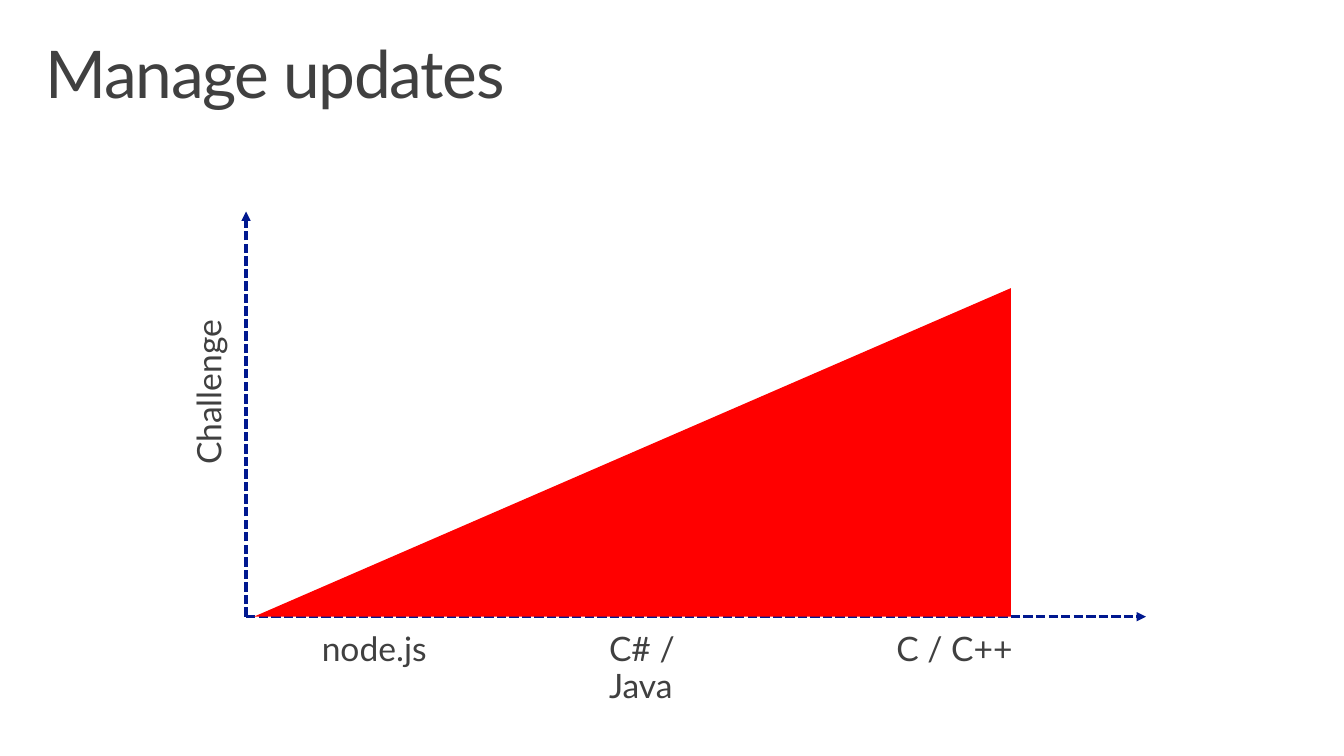
from lxml import etree
from pptx import Presentation
from pptx.dml.color import RGBColor
from pptx.enum.dml import MSO_LINE
from pptx.enum.shapes import MSO_CONNECTOR, MSO_SHAPE
from pptx.enum.text import MSO_ANCHOR, MSO_AUTO_SIZE, PP_ALIGN
from pptx.oxml.ns import qn
from pptx.util import Cm, Pt

STRAIGHT = MSO_CONNECTOR.STRAIGHT
RIGHT_TRIANGLE = MSO_SHAPE.RIGHT_TRIANGLE
DASH = MSO_LINE.SQUARE_DOT
TOP = MSO_ANCHOR.TOP
LEFT = PP_ALIGN.LEFT
NO_FIT = MSO_AUTO_SIZE.NONE

COLORS = {"text": "404040", "axis": "00188F", "challenge": "FF0000"}
FONT = "Lato"
LANGUAGES = ["node.js", "C# / Java", "C / C++"]


def color(name):
    """Return the named colour of the palette."""
    return RGBColor.from_string(COLORS[name])


def set_text(sp, text, size, inset_x, inset_y):
    """Fill a text shape with one left-aligned paragraph."""
    tf = sp.text_frame
    tf.word_wrap = True
    tf.auto_size = NO_FIT
    tf.vertical_anchor = TOP
    tf.margin_left = tf.margin_right = Cm(inset_x)
    tf.margin_top = tf.margin_bottom = Cm(inset_y)
    p = tf.paragraphs[0]
    r = p.add_run()
    r.text = text
    p.alignment = LEFT
    p.line_spacing = 0.9
    p.font.name = FONT
    p.font.size = Pt(size)
    p.font.color.rgb = color("text")
    return r


def add_title(s, text, x, y, w, h):
    """Place the slide title in the given box."""
    sp = s.shapes.title
    sp.left, sp.top, sp.width, sp.height = Cm(x), Cm(y), Cm(w), Cm(h)
    r = set_text(sp, text, 47, 0.41, 0.25)
    r.font._element.set("spc", "-100")


def add_axis(s, x1, y1, x2, y2):
    """Draw a dashed axis with an arrowhead at its end."""
    axis = s.shapes.add_connector(STRAIGHT, Cm(x1), Cm(y1), Cm(x2), Cm(y2))
    axis.line.color.rgb = color("axis")
    axis.line.width = Pt(2.25)
    axis.line.dash_style = DASH
    ln = axis.line._get_or_add_ln()
    etree.SubElement(ln, qn("a:tailEnd"), type="triangle")
    etree.SubElement(axis._element.spPr, qn("a:effectLst"))


def add_label(s, text, x, y, w, h=1.75, rotation=0):
    """Add an axis label, optionally rotated about its centre."""
    sp = s.shapes.add_textbox(Cm(x), Cm(y), Cm(w), Cm(h))
    sp.rotation = rotation
    set_text(sp, text, 24, 0.51, 0.41)


def add_challenge_chart(s, x, y, w, h):
    """Draw the axes, their labels and the rising wedge in the given box."""
    base = y + h
    add_axis(s, x, base, x, y)
    add_axis(s, x, base, x + w, base)
    add_label(s, "Challenge", x - 3.29, y + 3.62, 4.8, rotation=270)
    for i, language in enumerate(LANGUAGES):
        add_label(s, language, x + 1.4 + i * 7.24, base, 4.1)

    wedge_h = 8.28
    sp = s.shapes.add_shape(RIGHT_TRIANGLE, Cm(x + 0.2), Cm(base - wedge_h),
                            Cm(19.08), Cm(wedge_h))
    sp._element.spPr.xfrm.set("flipH", "1")
    sp.shadow.inherit = False
    sp.fill.solid()
    sp.fill.fore_color.rgb = color("challenge")
    sp.line.fill.background()


def main():
    """Build the slide and save it."""
    prs = Presentation()
    prs.slide_width, prs.slide_height = Cm(33.87), Cm(19.05)
    s = prs.slides.add_slide(prs.slide_layouts[5])
    add_title(s, "Manage updates", 0.74, 0.81, 32.39, 2.49)
    add_challenge_chart(s, 6.2, 5.33, 22.68, 10.21)
    prs.save("out.pptx")


if __name__ == "__main__":
    main()
